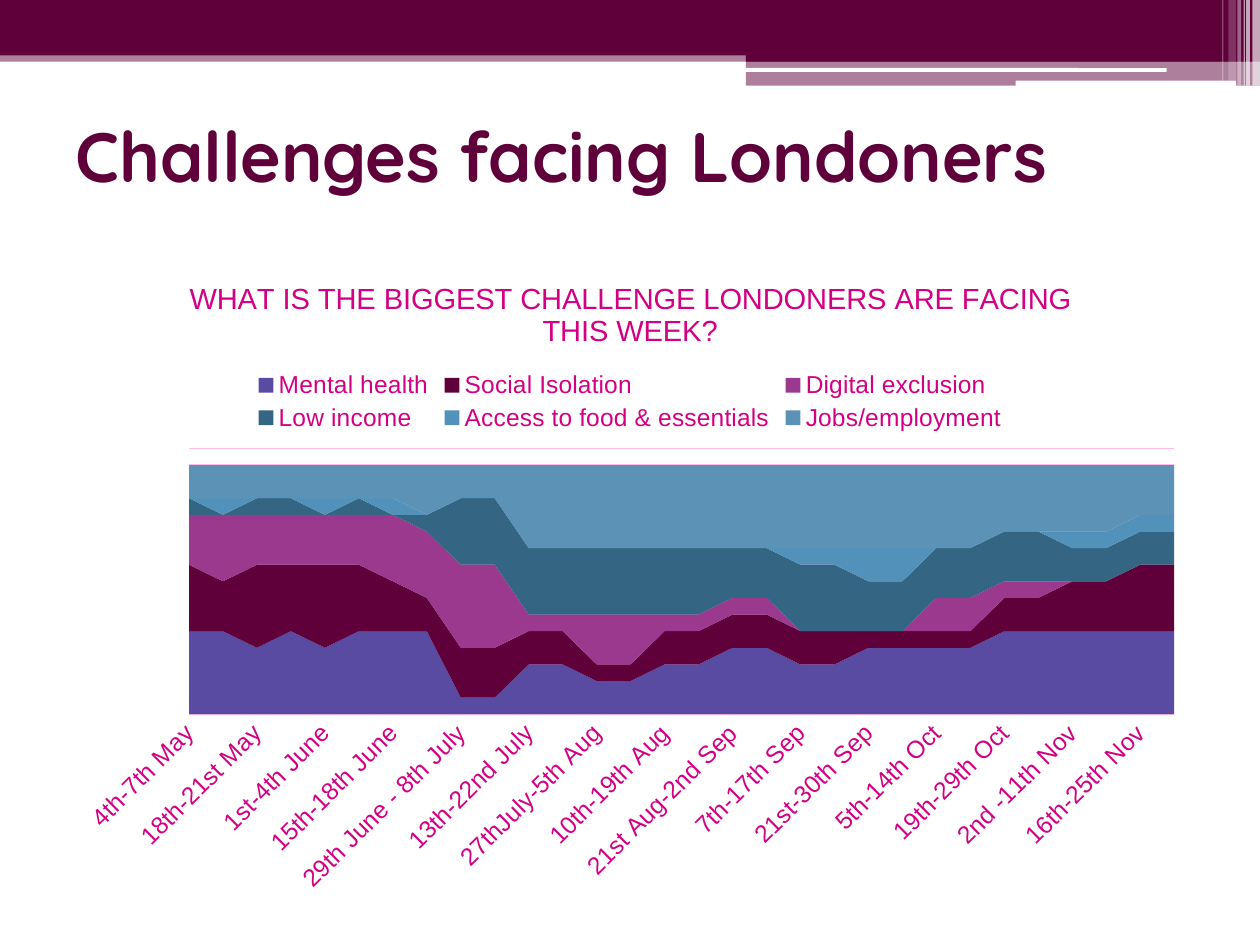
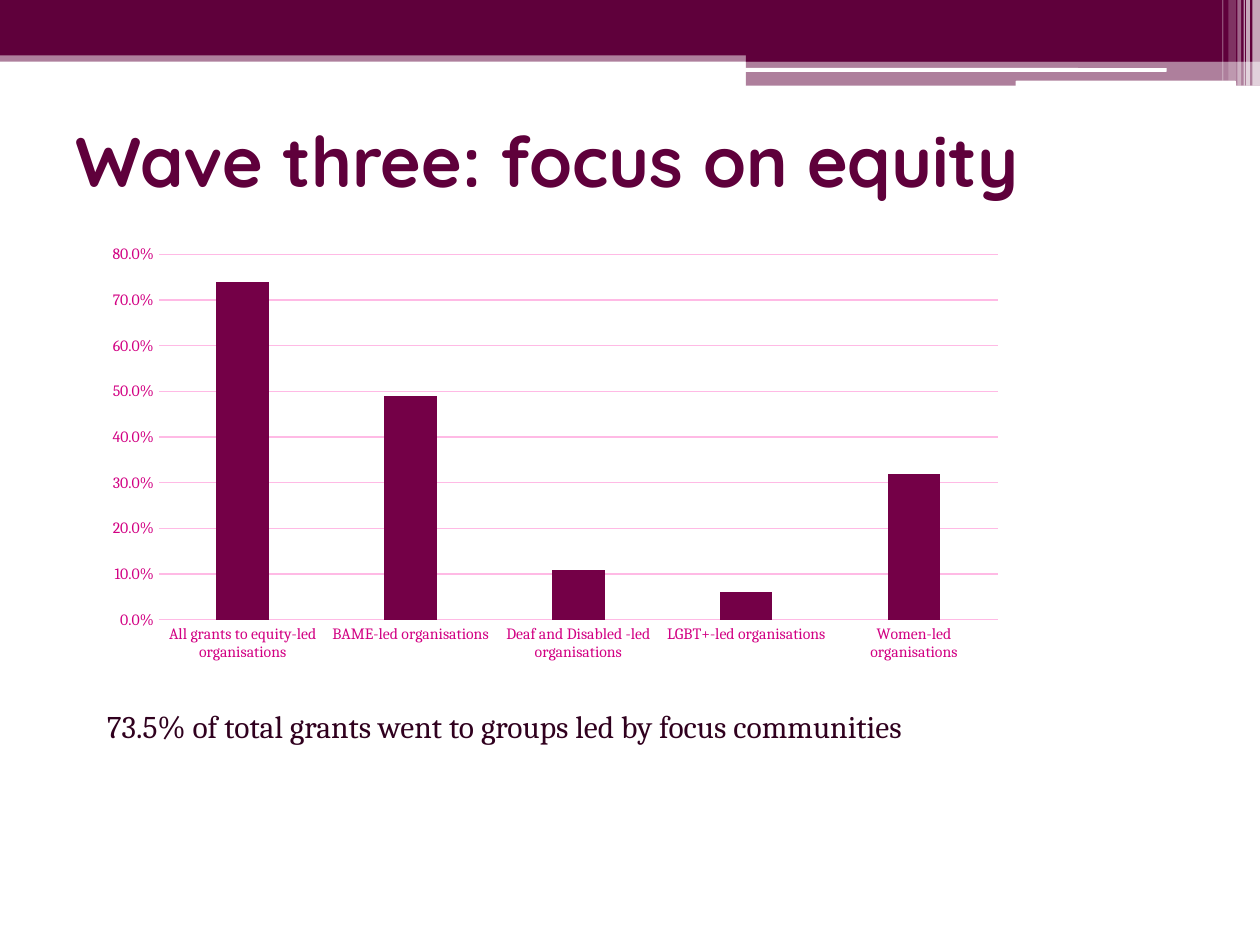
from itertools import chain
from typing import NamedTuple

from pptx import Presentation
from pptx.chart.axis import CategoryAxis, ValueAxis
from pptx.chart.chart import Chart
from pptx.chart.data import CategoryChartData
from pptx.dml.color import RGBColor
from pptx.enum.chart import XL_CHART_TYPE, XL_LEGEND_POSITION, XL_TICK_MARK
from pptx.enum.shapes import MSO_SHAPE
from pptx.enum.text import MSO_ANCHOR
from pptx.oxml import parse_xml
from pptx.oxml.ns import nsdecls, qn
from pptx.oxml.xmlchemy import OxmlElement
from pptx.slide import Slide
from pptx.util import Inches, Pt

PLUM = "5F003B"
DARK_PLUM = "30001E"
BAR_PLUM = "740047"
MAGENTA = "D20083"
PALE_PINK = "FFBAE5"
WHITE = "FFFFFF"


class Box(NamedTuple):
    left: float
    top: float
    width: float
    height: float


class Band(NamedTuple):
    box: Box
    color: str
    opacity: int = 100
    rounded: bool = False


class ChartSeries(NamedTuple):
    name: str
    values: list[float | None]
    color: str


BANDS = [
    Band(Box(0, 0.4, 10, 0.09), PLUM, 50),
    Band(Box(0, 0, 10, 0.34), PLUM),
    Band(Box(0, 0.34, 10, 0.1), PLUM),
    Band(Box(5.92, 0.39, 4.08, 0.1), PLUM),
    Band(Box(5.92, 0.48, 4.08, 0.2), PLUM, 50),
    Band(Box(5.91, 0.54, 3.35, 0.03), WHITE, rounded=True),
    Band(Box(8.06, 0.64, 1.75, 0.05), WHITE, rounded=True),
    Band(Box(9.94, 0, 0.06, 0.68), WHITE, 65),
    Band(Box(9.89, 0, 0.03, 0.68), WHITE, 65),
    Band(Box(9.87, 0, 0.01, 0.68), WHITE, 60),
    Band(Box(9.82, 0, 0.03, 0.68), WHITE, 40),
    Band(Box(9.75, 0, 0.06, 0.64), WHITE, 20),
    Band(Box(9.7, 0, 0.01, 0.64), WHITE, 30),
]

WEEKS = ["4th-7th May", "11th-14th May", "18th-21st May", "26th-28th May",
         "1st-4th June", "8th-11th June", "15th-18th June", "22nd-25th June"]
FORTNIGHTS = ["29th June - 8th July", "13th-22nd July", "27thJuly-5th Aug",
              "10th-19th Aug", "21st Aug-2nd Sep", "7th-17th Sep",
              "21st-30th Sep", "5th-14th Oct", "19th-29th Oct",
              "2nd -11th Nov", "16th-25th Nov"]


def challenge(name: str, color: str, weekly: list[int | None],
              fortnightly: list[int | None]) -> ChartSeries:
    """Each fortnightly score covers two points on the weekly axis."""
    doubled = chain.from_iterable((value, value) for value in fortnightly)
    return ChartSeries(name, [*weekly, *doubled], color)


CHALLENGES = [
    challenge("Mental health", "594AA2",
              [100, 100, 80, 100, 80, 100, 100, 100],
              [20, 60, 40, 60, 80, 60, 80, 80, 100, 100, 100]),
    challenge("Social Isolation", PLUM,
              [80, 60, 100, 80, 100, 80, 60, 40],
              [60, 40, 20, 40, 40, 40, 20, 20, 40, 60, 80]),
    challenge("Digital exclusion", "9A398D",
              [60, 80, 60, 60, 60, 60, 80, 80],
              [100, 20, 60, 20, 20, None, None, 40, 20, None, None]),
    challenge("Low income", "346583",
              [20, None, 20, 20, None, 20, None, 20],
              [80, 80, 80, 80, 60, 80, 60, 60, 60, 40, 40]),
    challenge("Access to food & essentials", "5292BA",
              [None, 20, None, None, 20, None, 20, None],
              [None, None, None, None, None, 20, 40, None, None, 20, 20]),
    challenge("Jobs/employment", "5C92B5",
              [40, 40, 40, 40, 40, 40, 40, 60],
              [40, 100, 100, 100, 100, 100, 100, 100, 80, 80, 60]),
]

EQUITY_SHARES = {
    "All grants to equity-led organisations": 0.74,
    "BAME-led organisations": 0.49,
    "Deaf and Disabled -led organisations": 0.11,
    "LGBT+-led organisations": 0.06,
    "Women-led organisations": 0.32,
}


def rgb(color: str) -> RGBColor:
    return RGBColor.from_string(color)


def set_font(font, name: str, size: float, color: str, bold: bool = False) -> None:
    for attribute, value in {"name": name, "size": Pt(size), "bold": bold}.items():
        setattr(font, attribute, value)
    font.color.rgb = rgb(color)


def place(box: Box) -> list[int]:
    return [Inches(length) for length in box]


def add_band(slide: Slide, band: Band) -> None:
    kind = MSO_SHAPE.ROUNDED_RECTANGLE if band.rounded else MSO_SHAPE.RECTANGLE
    shape = slide.shapes.add_shape(kind, *place(band.box))
    shape.shadow.inherit = False
    shape.line.fill.background()
    shape.fill.solid()
    shape.fill.fore_color.rgb = rgb(band.color)
    if band.opacity < 100:
        alpha = OxmlElement("a:alpha")
        alpha.set("val", str(band.opacity * 1000))
        shape.fill._xPr.find(qn("a:solidFill"))[0].append(alpha)


def add_text(slide: Slide, text: str, box: Box, font_name: str, size: float,
             color: str, bold: bool = False,
             anchor: MSO_ANCHOR = MSO_ANCHOR.TOP) -> None:
    frame = slide.shapes.add_textbox(*place(box)).text_frame
    frame.word_wrap = True
    frame.vertical_anchor = anchor
    run = frame.paragraphs[0].add_run()
    run.text = text
    set_font(run.font, font_name, size, color, bold)


def add_titled_slide(presentation: Presentation, title: str, top: float) -> Slide:
    slide = presentation.slides.add_slide(presentation.slide_layouts[6])
    for band in BANDS:
        add_band(slide, band)
    add_text(slide, title, Box(0.5, top, 9, 1.17), "Quicksand", 40, PLUM,
             bold=True, anchor=MSO_ANCHOR.MIDDLE)
    return slide


def set_plot_layout(chart: Chart, frame: Box, area: Box) -> None:
    """Fix the inner plot area; both boxes are in inches on the slide."""
    plot_area = chart._chartSpace.chart.plotArea
    for layout in plot_area.findall(qn("c:layout")):
        plot_area.remove(layout)
    shares = {
        "x": (area.left - frame.left) / frame.width,
        "y": (area.top - frame.top) / frame.height,
        "w": area.width / frame.width,
        "h": area.height / frame.height,
    }
    fractions = "".join(f'<c:{tag} val="{value:.5f}"/>' for tag, value in shares.items())
    plot_area.insert(0, parse_xml(
        f'<c:layout {nsdecls("c")}><c:manualLayout><c:layoutTarget val="inner"/>'
        f'<c:xMode val="edge"/><c:yMode val="edge"/>{fractions}'
        "</c:manualLayout></c:layout>"))


def style_axis(axis: CategoryAxis | ValueAxis, font_name: str, size: float) -> None:
    axis.major_tick_mark = axis.minor_tick_mark = XL_TICK_MARK.NONE
    set_font(axis.tick_labels.font, font_name, size, MAGENTA)


def set_pink_line(line) -> None:
    line.color.rgb = rgb(PALE_PINK)
    line.width = Pt(0.75)


def add_chart(slide: Slide, kind: XL_CHART_TYPE, box: Box, plot_area: Box,
              categories: list[str], series_list: list[ChartSeries],
              font_name: str, size: float, label_size: float) -> Chart:
    data = CategoryChartData()
    data.categories = categories
    for series in series_list:
        data.add_series(series.name, series.values)
    chart = slide.shapes.add_chart(kind, *place(box), data).chart
    set_font(chart.font, font_name, size, DARK_PLUM)
    chart.has_title = chart.has_legend = False
    set_plot_layout(chart, box, plot_area)
    for axis in (chart.category_axis, chart.value_axis):
        style_axis(axis, font_name, label_size)
    chart.category_axis.has_major_gridlines = False
    set_pink_line(chart.category_axis.format.line)
    chart.value_axis.has_major_gridlines = True
    set_pink_line(chart.value_axis.major_gridlines.format.line)
    chart.plots[0].vary_by_categories = False
    for drawn, series in zip(chart.plots[0].series, series_list):
        drawn.format.fill.solid()
        drawn.format.fill.fore_color.rgb = rgb(series.color)
    return chart


def build_challenges_slide(presentation: Presentation) -> None:
    slide = add_titled_slide(presentation, "Challenges facing Londoners", 0.64)
    dates = WEEKS + list(chain.from_iterable((label, "") for label in FORTNIGHTS))
    chart = add_chart(slide, XL_CHART_TYPE.AREA_STACKED, Box(0.5, 2.02, 9, 5.17),
                      Box(1.5, 3.56, 7.82, 2.11), dates, CHALLENGES, "Arial", 14, 14)
    chart.has_title = True
    run = chart.chart_title.text_frame.paragraphs[0].add_run()
    run.text = "WHAT IS THE BIGGEST CHALLENGE LONDONERS ARE FACING THIS WEEK?"
    set_font(run.font, "Arial", 16.6, MAGENTA)
    chart.has_legend = True
    chart.legend.position = XL_LEGEND_POSITION.TOP
    chart.legend.include_in_layout = False
    set_font(chart.legend.font, "Arial", 14, MAGENTA)

    scale = {"minimum_scale": 0, "maximum_scale": 320, "major_unit": 20, "visible": False}
    for attribute, value in scale.items():
        setattr(chart.value_axis, attribute, value)
    axis_element = chart.category_axis._element
    axis_element.find(qn("c:txPr")).find(qn("a:bodyPr")).set("rot", "-2700000")
    label_skip = OxmlElement("c:tickLblSkip")
    label_skip.set("val", "2")
    axis_element.find(qn("c:noMultiLvlLbl")).addprevious(label_skip)
    for blanks in chart._chartSpace.iter(qn("c:dispBlanksAs")):
        blanks.set("val", "zero")


def build_equity_slide(presentation: Presentation) -> None:
    slide = add_titled_slide(presentation, "Wave three: focus on equity", 0.68)
    shares = ChartSeries("Series 1", list(EQUITY_SHARES.values()), BAR_PLUM)
    chart = add_chart(slide, XL_CHART_TYPE.COLUMN_CLUSTERED, Box(0.75, 1.88, 7.32, 3.45),
                      Box(1.26, 2.02, 6.66, 2.9), list(EQUITY_SHARES), [shares],
                      "Cambria", 10, 9)
    chart.plots[0].gap_width = 219
    chart.plots[0].overlap = -27
    value_axis = chart.value_axis
    value_axis.minimum_scale, value_axis.maximum_scale = 0, 0.8
    value_axis.major_unit = 0.1
    value_axis.format.line.fill.background()
    value_axis.tick_labels.number_format = "0.0%"
    value_axis.tick_labels.number_format_is_linked = False
    add_text(slide, "73.5% of total grants went to groups led by focus communities",
             Box(0.75, 5.56, 7.17, 0.4), "Cambria", 18, DARK_PLUM)


def main() -> None:
    presentation = Presentation()
    presentation.slide_width, presentation.slide_height = Inches(10), Inches(7.5)
    build_challenges_slide(presentation)
    build_equity_slide(presentation)
    presentation.save("out.pptx")


if __name__ == "__main__":
    main()
